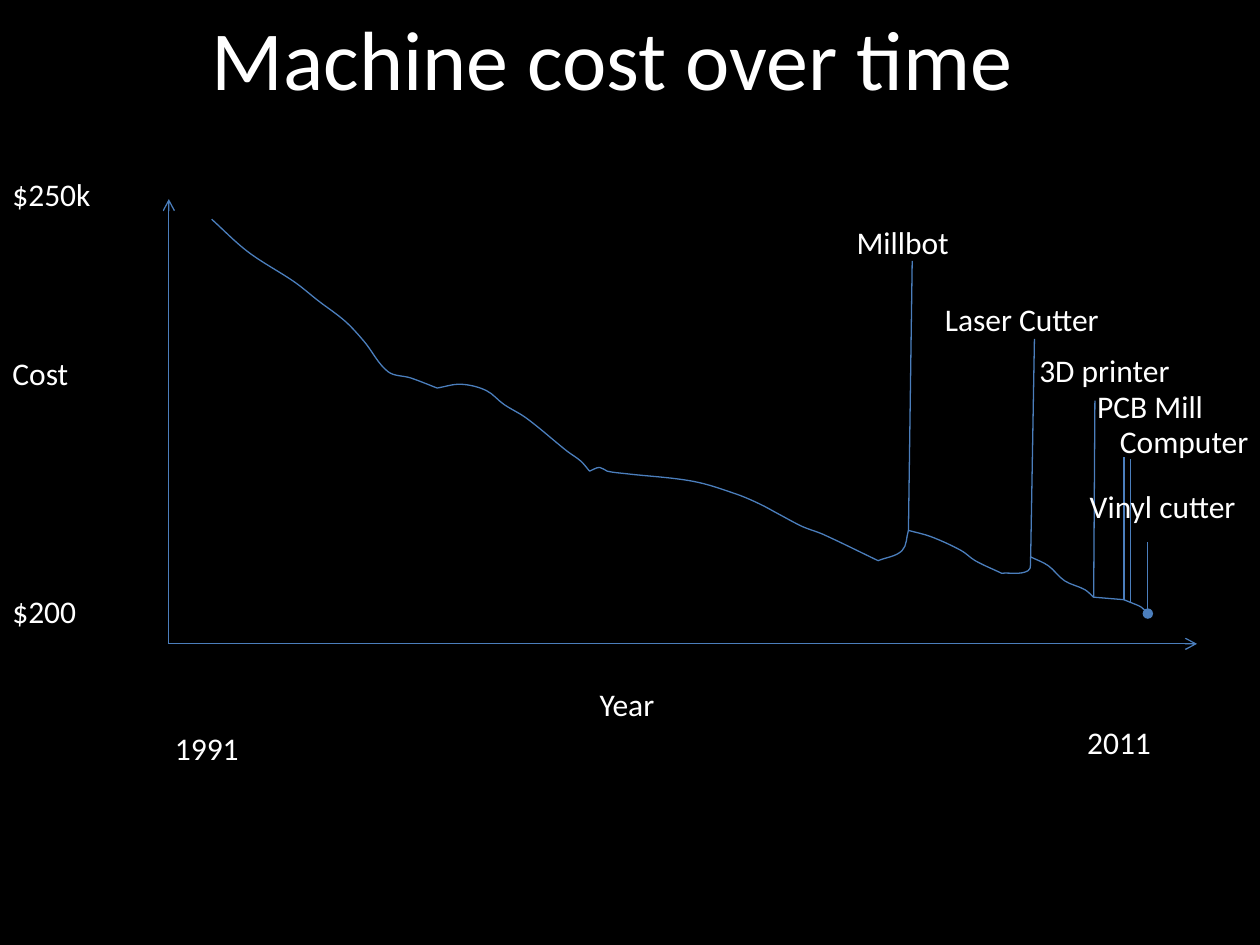
from dataclasses import dataclass
from itertools import pairwise
from math import dist

from lxml.etree import SubElement
from pptx import Presentation
from pptx.dml.color import RGBColor
from pptx.enum.shapes import MSO_CONNECTOR
from pptx.enum.text import MSO_ANCHOR, MSO_AUTO_SIZE, PP_ALIGN
from pptx.oxml.ns import qn
from pptx.util import Inches, Pt

COLUMNS, ROWS = 100, 75
WIDTH, HEIGHT = Inches(10), Inches(7.5)
BLACK, WHITE, BLUE = "000000", "FFFFFF", "4B7EBC"
TITLE_BOX = (15.8, 0, 66.3, 9.1)
CHART_BOX = (0, 10, 100, 55)
LABEL_HEIGHT = 4
ORIGIN, YEAR_END, COST_END = (13.4, 41.1), (95, 41.1), (13.4, 5.8)

FRAME_FORMAT = {"word_wrap": False, "auto_size": MSO_AUTO_SIZE.SHAPE_TO_FIT_TEXT,
                "vertical_anchor": MSO_ANCHOR.TOP}


@dataclass
class Label:
    """A line of text and its place in the chart grid."""
    text: str
    column: float
    row: float
    width: float


@dataclass
class Machine:
    """A labelled machine whose marker rises from the end of a cost stage."""
    label: Label
    stage: str
    marker_top: float
    lean: float = 0


AXIS_LABELS = [
    Label("Year", 46.6, 43.9, 7.1), Label("Cost", 0, 17.6, 7.2),
    Label("$250k", 0, 3.4, 8.9), Label("$200", 0, 36.5, 7.6),
    Label("1991", 12.9, 47.4, 7.6), Label("2011", 85.3, 46.9, 7.4),
]

COST_STAGES = {
    "first fall": [(16.8, 7.4), (19.7, 10), (23.4, 12.4), (25.3, 13.9), (27.4, 15.5),
                   (28.9, 17.1), (30.8, 19.5), (32.6, 20), (34.7, 20.8)],
    "second fall": [(36.6, 20.5), (38.6, 21), (40, 22.1), (41.8, 23.2), (45, 25.8),
                    (46.1, 26.6), (46.8, 27.4)],
    "long slope": [(47.6, 27.1), (48.2, 27.4), (49.7, 27.6), (55, 28.2), (58.4, 29.2),
                   (60.3, 30), (61.8, 30.8), (63.7, 31.8), (65.3, 32.4), (69.7, 34.5)],
    "mill jump": [(71.6, 33.7), (72.1, 32.1)],
    "mill fall": [(73.9, 32.6), (76.3, 33.7), (77.4, 34.5), (79.5, 35.5)],
    "laser jump": [(81.6, 35.3), (81.8, 34.2)],
    "laser fall": [(83.2, 34.9), (84.5, 36.1), (86.1, 36.8), (86.8, 37.4)],
    "level": [(89.2, 37.6)],
    "step": [(89.7, 37.8)],
    "last fall": [(90.6, 38.2), (91.1, 38.7)],
}

MACHINES = [
    Machine(Label("Millbot", 67, 7.2, 11.4), "mill jump", 10.7, lean=0.3),
    Machine(Label("Laser Cutter", 74, 13.3, 15.9), "laser jump", 16.9, lean=0.3),
    Machine(Label("3D printer", 81.5, 17.4, 13.1), "laser fall", 21.8, lean=0.1),
    Machine(Label("PCB Mill", 86.1, 20.2, 11.7), "level", 26.3),
    Machine(Label("Computer", 87.9, 23, 13.1), "step", 26.4),
    Machine(Label("Vinyl cutter", 85.5, 28.2, 14.5), "last fall", 33),
]


def colour(value):
    """Turn a hex string into a colour."""
    return RGBColor.from_string(value)


def across(columns):
    """Turn grid columns into a length."""
    return round(WIDTH * columns / COLUMNS)


def down(rows):
    """Turn grid rows into a length."""
    return round(HEIGHT * rows / ROWS)


def locate(box, point):
    """Return the slide position of a grid point within a box."""
    return across(box[0] + point[0]), down(box[1] + point[1])


def set_values(target, values):
    """Set each named attribute of an object."""
    for name, value in values.items():
        setattr(target, name, value)


def write_text(shape, text, size):
    """Write one line of white text in a shape."""
    frame = shape.text_frame
    set_values(frame, FRAME_FORMAT)
    para = frame.paragraphs[0]
    para.alignment = PP_ALIGN.LEFT
    span = para.add_run()
    span.text = text
    set_values(span.font, {"name": "Calibri", "size": Pt(size)})
    span.font.color.rgb = colour(WHITE)


def style_line(shape):
    """Give a shape the thin blue line."""
    shape.line.color.rgb = colour(BLUE)
    shape.line.width = Pt(0.75)


def add_title(page, box):
    """Place the slide title in its box."""
    left, top, width, height = box
    title = page.shapes.title
    set_values(title, {"left": across(left), "top": down(top),
                       "width": across(width), "height": down(height)})
    write_text(title, "Machine cost over time", 48)


def add_label(page, box, label):
    """Place a label within a box."""
    shape = page.shapes.add_textbox(*locate(box, (label.column, label.row)),
                                    across(label.width), down(LABEL_HEIGHT))
    write_text(shape, label.text, 18)


def add_line(page, box, start, end, tip=None, kind=None):
    """Draw a straight line within a box, with an optional tip."""
    line = page.shapes.add_connector(
        MSO_CONNECTOR.STRAIGHT, *locate(box, start), *locate(box, end))
    style_line(line)
    if tip:
        SubElement(line.line._get_or_add_ln(), qn(f"a:{tip}"), type=kind)
    SubElement(line._element.spPr, qn("a:effectLst"))


def step_along(point, before, after, reach):
    """Move from a point by a reach, parallel to its neighbours' chord."""
    share = reach / dist(before, after)
    return tuple(here + share * (end - start)
                 for here, start, end in zip(point, before, after))


def smooth_bends(knots):
    """Yield two handles and an end point for each bend of a smooth stage."""
    padded = [knots[0], *knots, knots[-1]]
    for index, (start, end) in enumerate(pairwise(knots)):
        before, after = padded[index], padded[index + 3]
        reach = dist(start, end) / 3
        yield (step_along(start, before, end, reach),
               step_along(end, start, after, -reach), end)


def add_cost_curve(page, box):
    """Draw the cost stages as one curve, smooth within each stage."""
    start = corner = COST_STAGES["first fall"][0]
    bends = []
    for knots in COST_STAGES.values():
        route = knots if knots[0] == corner else [corner, *knots]
        bends.extend(smooth_bends(route))
        corner = knots[-1]
    builder = page.shapes.build_freeform(*locate(box, start))
    builder.add_line_segments(
        [locate(box, point) for bend in bends for point in bend], close=False)
    curve = builder.convert_to_shape()
    curve.shadow.inherit = False
    curve.fill.background()
    style_line(curve)
    outline = curve._element.find(f".//{qn('a:path')}")
    segments = iter(outline.findall(qn("a:lnTo")))
    for trio in zip(segments, segments, segments):
        cubic = SubElement(outline, qn("a:cubicBezTo"))
        for segment in trio:
            cubic.append(segment[0])
            outline.remove(segment)


def add_machine(page, box, machine):
    """Draw a machine's marker from its cost point, and its label."""
    foot = COST_STAGES[machine.stage][-1]
    tip = ("headEnd", "oval") if machine is MACHINES[-1] else ()
    add_line(page, box, foot, (foot[0] + machine.lean, machine.marker_top), *tip)
    add_label(page, box, machine.label)


def add_cost_chart(page, box):
    """Draw the axes, cost curve and machines within a box."""
    for end in (YEAR_END, COST_END):
        add_line(page, box, ORIGIN, end, "tailEnd", "arrow")
    for label in AXIS_LABELS:
        add_label(page, box, label)
    add_cost_curve(page, box)
    for machine in MACHINES:
        add_machine(page, box, machine)


def main():
    """Build and save the slide."""
    deck = Presentation()
    set_values(deck, {"slide_width": WIDTH, "slide_height": HEIGHT})
    page = deck.slides.add_slide(deck.slide_layouts[5])
    page.background.fill.solid()
    page.background.fill.fore_color.rgb = colour(BLACK)
    add_title(page, TITLE_BOX)
    add_cost_chart(page, CHART_BOX)
    deck.save("out.pptx")


if __name__ == "__main__":
    main()
